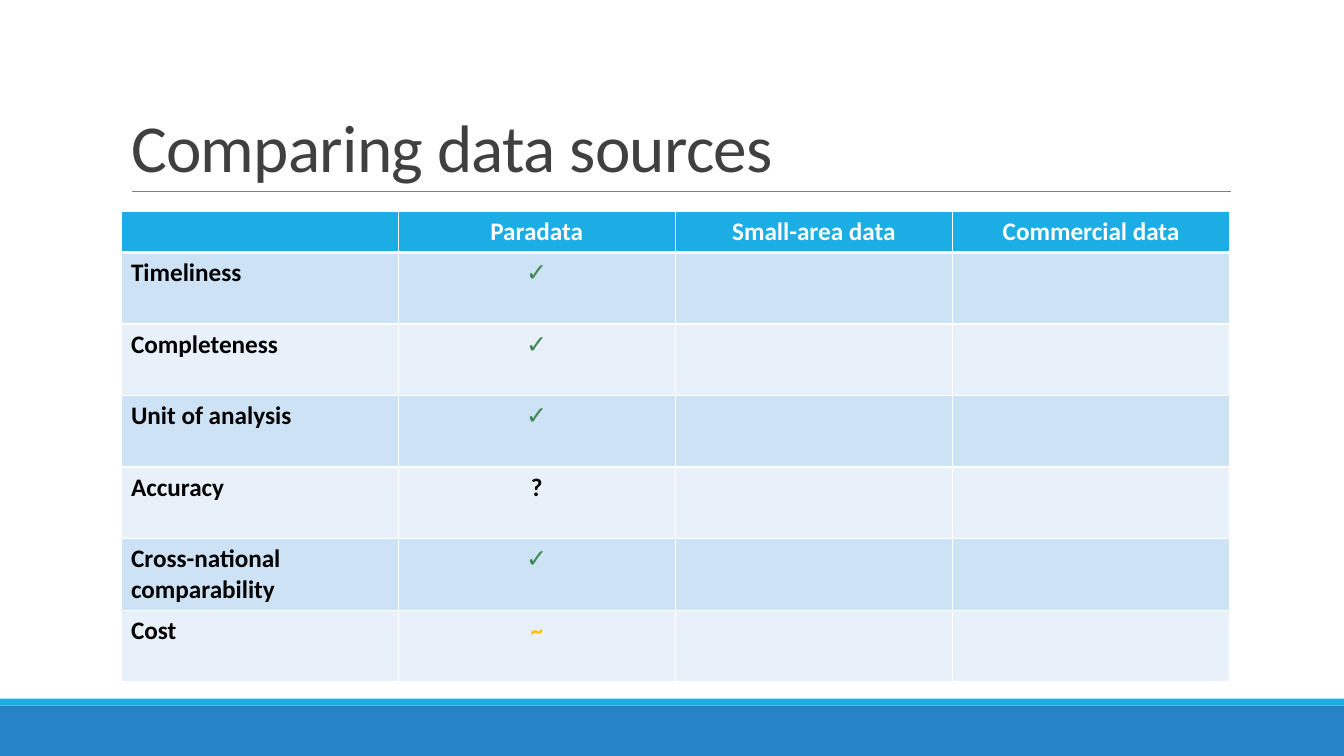
"""Build the slide that compares data sources in a table."""
from lxml.etree import SubElement
from pptx import Presentation
from pptx.dml.color import RGBColor
from pptx.enum.shapes import MSO_CONNECTOR as Connector, MSO_SHAPE as Shape
from pptx.enum.text import MSO_ANCHOR as Anchor, MSO_AUTO_SIZE as AutoSize, PP_ALIGN as Align
from pptx.oxml.ns import qn
from pptx.util import Pt

TITLE = "Comparing data sources"
HEADER = ["", "Paradata", "Small-area data", "Commercial data"]
RATINGS = [
    ("Timeliness", "✓"),
    ("Completeness", "✓"),
    ("Unit of analysis", "✓"),
    ("Accuracy", "?"),
    ("Cross-national comparability", "✓"),
    ("Cost", "~"),
]
MARK_COLORS = {"✓": "3E8853", "?": "000000", "~": "FFC000"}
BLUE, CYAN, WHITE, BLACK = "2683C6", "1CADE4", "FFFFFF", "000000"
BANDS = ["CDE3F5", "E8F1FA"]
FONT = "Calibri"
WIDTH, HEIGHT = 960, 540
FOOTER_BARS = [(504, 36, BLUE), (499, 5, CYAN)]
LEFT, TABLE_TOP, TABLE_WIDTH = 86.4, 151.2, 792
HEADER_HEIGHT, ROW_HEIGHT = 29.2, 51.1


def color(value):
    return RGBColor.from_string(value)


def write(frame, text, size=18, ink=BLACK, bold=False, align=Align.LEFT, line=1.0, spacing=0):
    para = frame.paragraphs[0]
    para.alignment = align
    para.line_spacing = line
    span = para.add_run()
    span.text = text
    span.font.name = FONT
    span.font.size = Pt(size)
    span.font.bold = bold
    span.font.color.rgb = color(ink)
    if spacing:
        span.font._element.set("spc", str(int(spacing * 100)))


def add_border(cell, side, width):
    properties = cell._tc.get_or_add_tcPr()
    edge = SubElement(properties, qn(f"a:ln{side}"), w=str(Pt(width)))
    SubElement(SubElement(edge, qn("a:solidFill")), qn("a:srgbClr"), val=WHITE)


def add_bars(page):
    for top, height, fill in FOOTER_BARS:
        bar = page.shapes.add_shape(Shape.RECTANGLE, 0, Pt(top), Pt(WIDTH), Pt(height))
        bar.shadow.inherit = False
        bar.fill.solid()
        bar.fill.fore_color.rgb = color(fill)
        bar.line.fill.background()


def add_title(page):
    rule = page.shapes.add_connector(Connector.STRAIGHT, Pt(94.3), Pt(136.8), Pt(879), Pt(136.8))
    rule.line.color.rgb = color("808080")
    rule.line.width = Pt(0.5)
    SubElement(rule._element.spPr, qn("a:effectLst"))
    title = page.shapes.title
    title.left, title.top, title.width, title.height = Pt(LEFT), Pt(22.6), Pt(TABLE_WIDTH), Pt(114.2)
    frame = title.text_frame
    frame.auto_size = AutoSize.NONE
    frame.vertical_anchor = Anchor.BOTTOM
    write(frame, TITLE, size=48, ink="404040", line=0.85, spacing=-0.5)


def add_comparison(page):
    rows = [HEADER] + [[*rating, "", ""] for rating in RATINGS]
    height = HEADER_HEIGHT + ROW_HEIGHT * len(RATINGS)
    table = page.shapes.add_table(len(rows), len(HEADER), Pt(LEFT), Pt(TABLE_TOP),
                                  Pt(TABLE_WIDTH), Pt(height)).table
    for column in table.columns:
        column.width = Pt(TABLE_WIDTH / len(HEADER))
    for r, texts in enumerate(rows):
        table.rows[r].height = Pt(ROW_HEIGHT if r else HEADER_HEIGHT)
        for c, text in enumerate(texts):
            cell = table.cell(r, c)
            for side in "LRTB":
                add_border(cell, side, 3 if (r, side) in [(0, "B"), (1, "T")] else 1)
            cell.fill.solid()
            cell.fill.fore_color.rgb = color(BANDS[(r - 1) % 2] if r else CYAN)
            if text:
                ink = MARK_COLORS.get(text, BLACK) if r else WHITE
                write(cell.text_frame, text, ink=ink, bold=True,
                      align=Align.CENTER if c else Align.LEFT)


def main():
    deck = Presentation()
    deck.slide_width, deck.slide_height = Pt(WIDTH), Pt(HEIGHT)
    page = deck.slides.add_slide(deck.slide_layouts[5])
    add_bars(page)
    add_title(page)
    add_comparison(page)
    deck.save("out.pptx")


if __name__ == "__main__":
    main()
